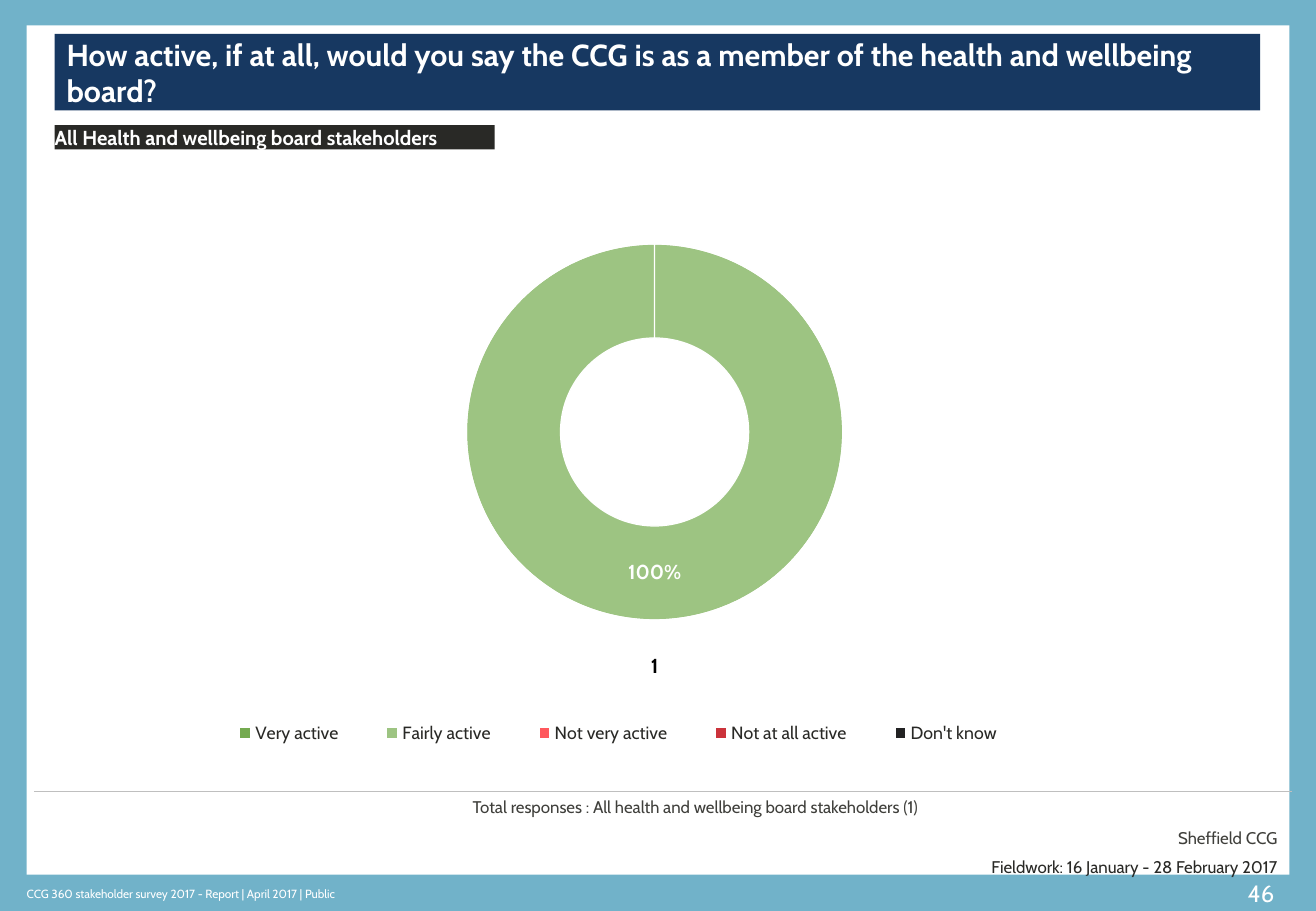
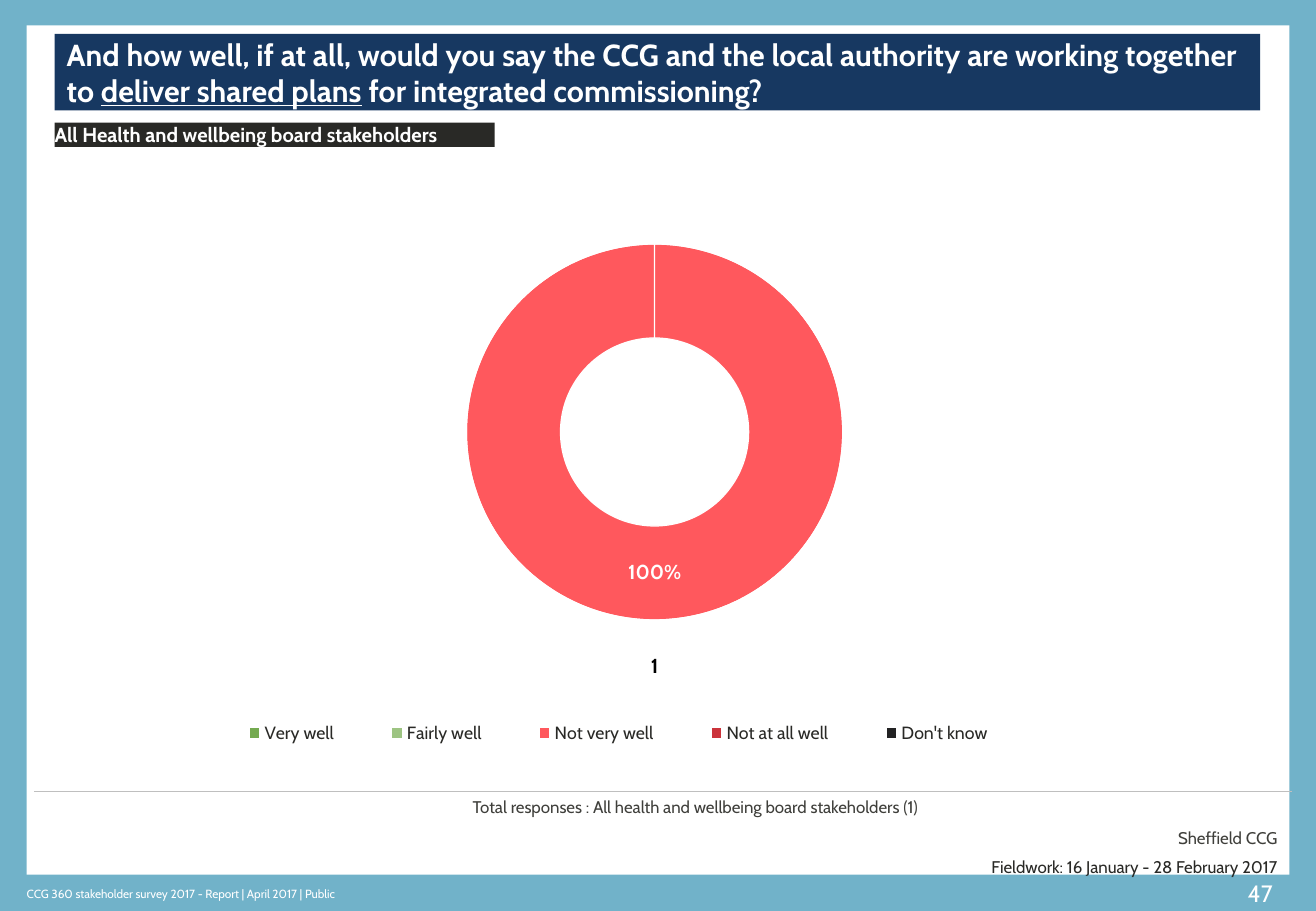
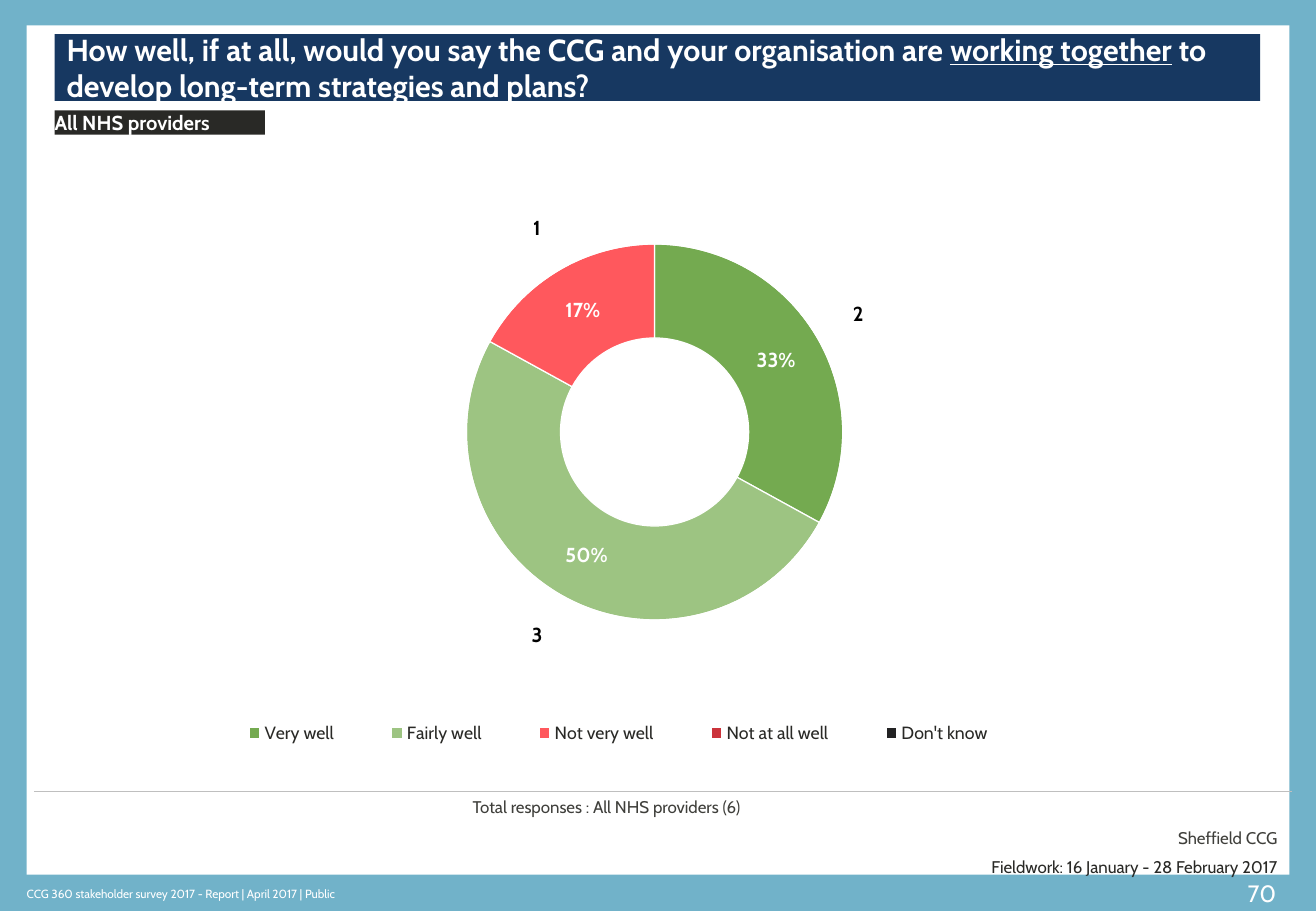
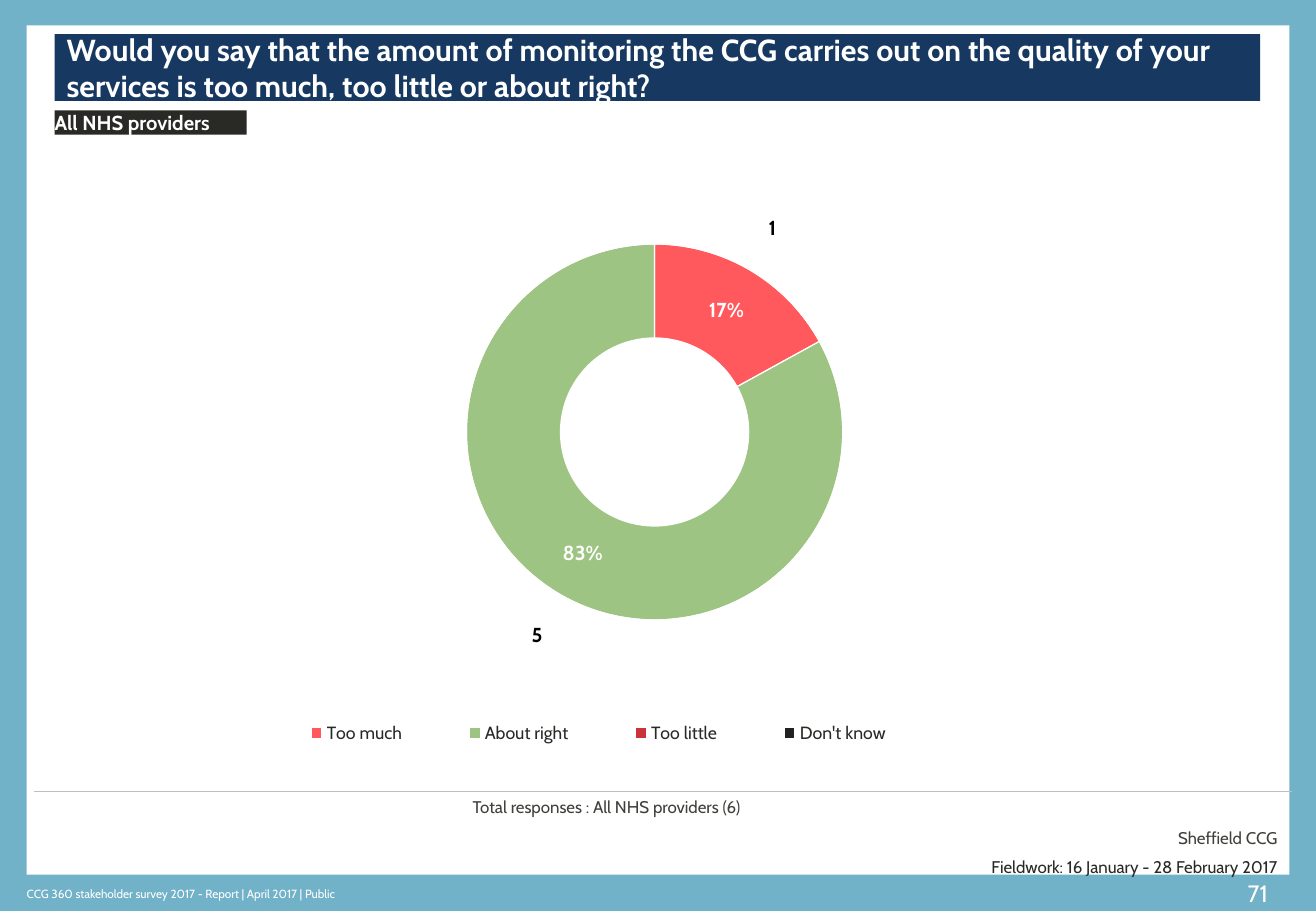
from lxml import etree
from pptx import Presentation
from pptx.chart.data import CategoryChartData
from pptx.dml.color import RGBColor
from pptx.enum.chart import XL_CHART_TYPE as CT, XL_LEGEND_POSITION as LP
from pptx.enum.shapes import MSO_CONNECTOR, MSO_SHAPE
from pptx.enum.text import MSO_ANCHOR as ANCHOR, PP_ALIGN as AL
from pptx.oxml.ns import qn
from pptx.util import Inches, Pt

FONT = "Cabin"
BLUE, NAVY, DARK, WHITE = "71B2C9", "173861", "292926", "FFFFFF"
GREY, RULE, BLACK = "3F3F3B", "BFBFBF", "000000"
GREEN, LIGHT_GREEN, CORAL, RED, INK = "74AA50", "9DC482", "FF585D", "CB333B", "222223"
FIVE_COLOURS = [GREEN, LIGHT_GREEN, CORAL, RED, INK]
ACTIVE = ["Very active", "Fairly active", "Not very active", "Not at all active", "Don't know"]
WELL = ["Very well", "Fairly well", "Not very well", "Not at all well", "Don't know"]
AMOUNT = ["Too much", "About right", "Too little", "Don't know"]

rgb = RGBColor.from_string


def add_text(s, at, *paragraphs, size=10, color=DARK, bold=False, fill=None,
             inset=(0, 0), anchor=ANCHOR.TOP, aligns=(AL.LEFT,), space=0):
    box = [Inches(v) for v in at]
    if fill:
        sp = s.shapes.add_shape(MSO_SHAPE.RECTANGLE, *box)
        sp.shadow.inherit = False
        sp.fill.solid()
        sp.fill.fore_color.rgb = rgb(fill)
        sp.line.fill.background()
    else:
        sp = s.shapes.add_textbox(*box)
    tf = sp.text_frame
    tf.word_wrap = True
    tf.vertical_anchor = anchor
    tf.margin_left = tf.margin_right = Inches(inset[0])
    tf.margin_top = tf.margin_bottom = Inches(inset[1])
    for i, (runs, align) in enumerate(zip(paragraphs, aligns)):
        p = tf.add_paragraph() if i else tf.paragraphs[0]
        p.alignment = align
        if i:
            p.space_before = Pt(space)
        for j, text in enumerate(runs):
            r = p.add_run()
            r.text = text
            r.font.name, r.font.size, r.font.bold = FONT, Pt(size), bold
            r.font.color.rgb = rgb(color)
            if j % 2:
                r.font.underline = True


def set_layout(parent, index, x, y, w, h, inner=False):
    for old in parent.findall(qn("c:layout")):
        parent.remove(old)
    layout = etree.Element(qn("c:layout"))
    manual = etree.SubElement(layout, qn("c:manualLayout"))
    values = [("layoutTarget", "inner")] if inner else []
    values += [("xMode", "edge"), ("yMode", "edge"), ("x", x), ("y", y), ("w", w), ("h", h)]
    for tag, value in values:
        etree.SubElement(manual, qn("c:" + tag)).set("val", str(value))
    parent.insert(index, layout)


HWB = "All Health and wellbeing board stakeholders"
HWB_BASE = "Total responses : All health and wellbeing board stakeholders (1)"
NHS = "All NHS providers"
NHS_BASE = "Total responses : All NHS providers (6)"

slides = [
    dict(page="46", title=["How active, if at all, would you say the CCG is as a member of the "
                           "health and wellbeing board?"],
         title_h=0.63, group=HWB, group_y=1.03, group_w=3.62, base=HWB_BASE,
         cats=ACTIVE, colours=FIVE_COLOURS, percents=[0, 100, 0, 0, 0], counts=[0, 1, 0, 0, 0]),
    dict(page="47", title=["And how well, if at all, would you say the CCG and the local authority "
                           "are working together to ", "deliver shared plans",
                           " for integrated commissioning?"],
         title_h=0.63, group=HWB, group_y=1.01, group_w=3.62, base=HWB_BASE,
         cats=WELL, colours=FIVE_COLOURS, percents=[0, 0, 100, 0, 0], counts=[0, 0, 1, 0, 0]),
    dict(page="70", title=["How well, if at all, would you say the CCG and your organisation are ",
                           "working together", " to develop long-term strategies and plans?"],
         title_h=0.55, group=NHS, group_y=0.91, group_w=1.73, base=NHS_BASE,
         cats=WELL, colours=FIVE_COLOURS, percents=[33, 50, 17, 0, 0], counts=[2, 3, 1, 0, 0]),
    dict(page="71", title=["Would you say that the amount of monitoring the CCG carries out on the "
                           "quality of your services is too much, too little or about right?"],
         title_h=0.55, group=NHS, group_y=0.91, group_w=1.58, base=NHS_BASE,
         cats=AMOUNT, colours=[CORAL, LIGHT_GREEN, RED, INK],
         percents=[17, 83, 0, 0], counts=[1, 5, 0, 0]),
]

prs = Presentation()
prs.slide_width, prs.slide_height = Inches(10.83), Inches(7.5)
background = prs.slide_master.background.fill
background.solid()
background.fore_color.rgb = rgb(BLUE)

for d in slides:
    s = prs.slides.add_slide(prs.slide_layouts[6])

    add_text(s, (0.22, 0.21, 10.39, 6.99), fill=WHITE)
    add_text(s, (10.17, 7.19, 0.44, 0.34), [d["page"]], size=14, color=WHITE, inset=(0.1, 0.05))
    add_text(s, (0.22, 7.26, 5.35, 0.2),
             ["CCG 360 stakeholder survey 2017 - Report | April 2017 | Public"],
             size=7, color=WHITE, anchor=ANCHOR.MIDDLE)
    rule = s.shapes.add_connector(MSO_CONNECTOR.STRAIGHT, Inches(0.28), Inches(6.51),
                                  Inches(10.63), Inches(6.51))
    rule.line.color.rgb = rgb(RULE)
    rule.line.width = Pt(0.25)
    etree.SubElement(rule._element.spPr, qn("a:effectLst"))

    data = CategoryChartData()
    data.categories = d["cats"]
    data.add_series("Series 1", d["percents"])
    data.add_series("Series 2", d["counts"])
    chart = s.shapes.add_chart(CT.DOUGHNUT, Inches(0), Inches(1.23), Inches(10.83), Inches(5.28),
                               data).chart
    chart.has_title = False
    chart.font.name, chart.font.size = FONT, Pt(12)
    chart.font.color.rgb = rgb(DARK)
    plot = chart.plots[0]
    plot.vary_by_categories = True
    plot._element.find(qn("c:holeSize")).set("val", "38")
    set_layout(chart._chartSpace.chart.plotArea, 0, 0.283, 0, 0.429, 0.881, inner=True)

    chart.has_legend = True
    legend = chart.legend
    legend.position = LP.BOTTOM
    legend.include_layout = False
    legend.font.name, legend.font.size = FONT, Pt(10.5)
    legend.font.color.rgb = rgb(DARK)
    legend_x, legend_w = (0.15, 0.64) if len(d["cats"]) == 5 else (0.19, 0.53)
    set_layout(legend._element, 1, legend_x, 0.87, legend_w, 0.08)

    rings = [(d["colours"], WHITE, '0"%";;'), ([None] * len(d["cats"]), BLACK, "0;;")]
    for series, (colours, label_colour, number_format) in zip(plot.series, rings):
        for i, colour in enumerate(colours):
            fmt = series.points[i].format
            if colour:
                fmt.fill.solid()
                fmt.fill.fore_color.rgb = rgb(colour)
            else:
                fmt.fill.background()
            fmt.line.color.rgb = rgb(WHITE)
            fmt.line.width = Pt(0.75)
        labels = series.data_labels
        labels.show_value = True
        labels.number_format = number_format
        labels.number_format_is_linked = False
        labels.font.name, labels.font.size, labels.font.bold = FONT, Pt(12), True
        labels.font.color.rgb = rgb(label_colour)

    add_text(s, (0.45, 0.28, 9.92, d["title_h"]), d["title"], size=18, color=WHITE, bold=True,
             fill=NAVY, inset=(0.1, 0.05), anchor=ANCHOR.MIDDLE)
    add_text(s, (0.45, d["group_y"], d["group_w"], 0.2), [d["group"]], size=12, color=WHITE,
             bold=True, fill=DARK)
    add_text(s, (3.79, 6.51, 6.82, 0.38), [d["base"]], ["Sheffield CCG"], color=GREY,
             inset=(0.1, 0.05), aligns=(AL.LEFT, AL.RIGHT), space=6)
    add_text(s, (7.62, 7.05, 2.89, 0.17), ["Fieldwork: 16 January - 28 February 2017"],
             aligns=(AL.RIGHT,))

prs.save("out.pptx")
